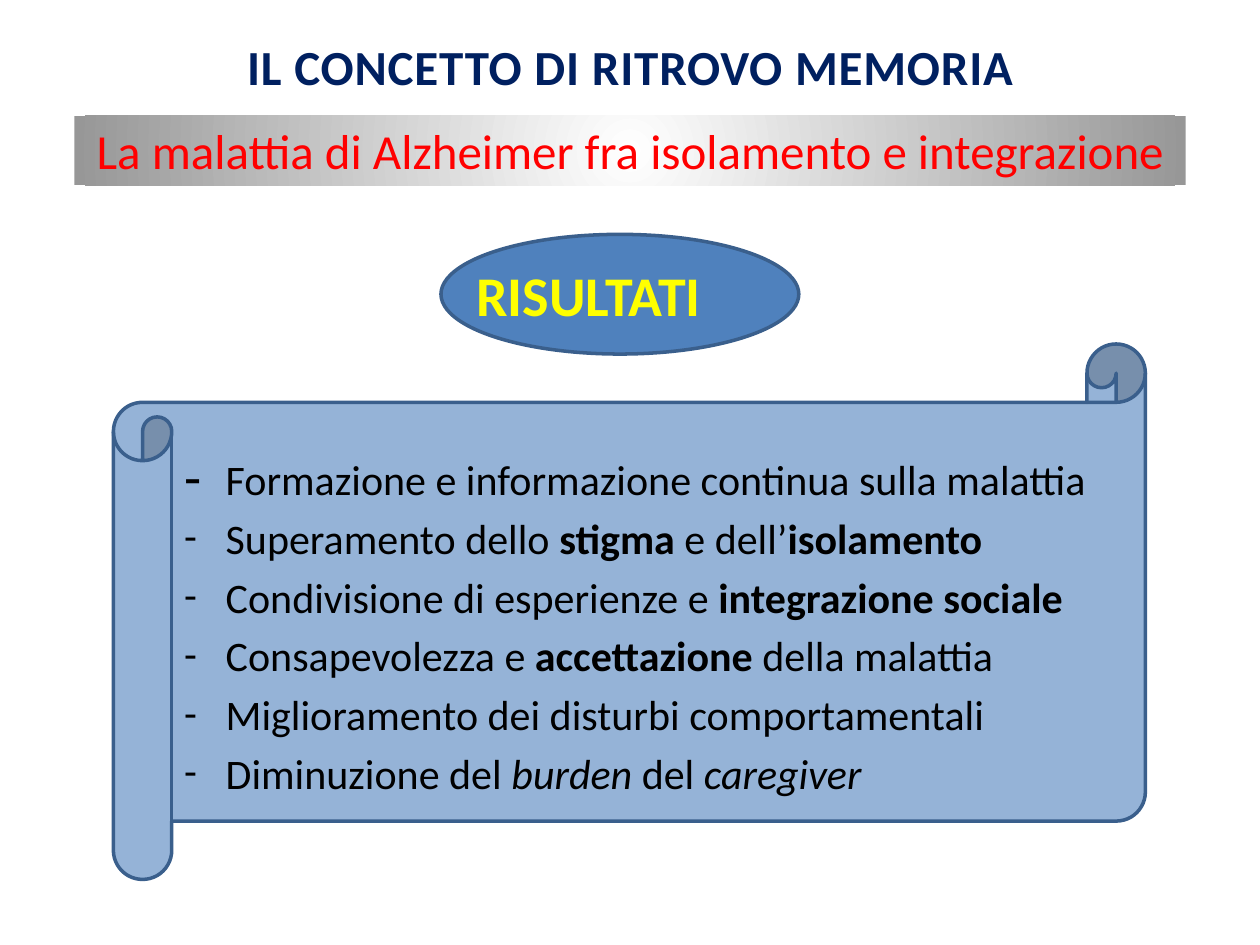
"""Build the slide on the results of the memory meeting place."""
import pptx
import pptx.util
import pptx.dml.color
import pptx.enum.shapes
import pptx.enum.text
import pptx.oxml
import pptx.oxml.ns

Inches, Pt = pptx.util.Inches, pptx.util.Pt
RGBColor = pptx.dml.color.RGBColor
SHAPE = pptx.enum.shapes.MSO_SHAPE
ANCHOR = pptx.enum.text.MSO_ANCHOR
ALIGN = pptx.enum.text.PP_ALIGN
qn = pptx.oxml.ns.qn

NAVY = RGBColor(0x00, 0x20, 0x60)
RED = RGBColor(0xFF, 0x00, 0x00)
YELLOW = RGBColor(0xFF, 0xFF, 0x00)
BLACK = RGBColor(0x00, 0x00, 0x00)
WHITE = RGBColor(0xFF, 0xFF, 0xFF)
GREY = RGBColor(0x97, 0x97, 0x97)
BLUE = RGBColor(0x4F, 0x81, 0xBD)
PALE = RGBColor(0x95, 0xB3, 0xD7)
EDGE = RGBColor(0x3A, 0x5F, 0x8C)

TITLE = "IL CONCETTO DI RITROVO MEMORIA"
BANNER = "La malattia di Alzheimer fra isolamento e integrazione"
HEAD = "RISULTATI"
ITEMS = [
    [("Formazione e informazione continua sulla malattia", "")],
    [("Superamento dello ", ""), ("stigma", "b"), (" e dell’", ""), ("isolamento", "b")],
    [("Condivisione di esperienze e ", ""), ("integrazione sociale", "b")],
    [("Consapevolezza e ", ""), ("accettazione", "b"), (" della malattia", "")],
    [("Miglioramento dei disturbi comportamentali", "")],
    [("Diminuzione del ", ""), ("burden", "i"), (" del ", ""), ("caregiver", "i")],
]
HANG = Inches(0.33)


def style(para, size, color, bold=None):
    font = para.font
    font.name, font.size, font.bold = "Calibri", Pt(size), bold
    font.color.rgb = color


def draw(slide, kind, box, fill=None):
    shape = slide.shapes.add_shape(kind, *map(Inches, box))
    shape.shadow.inherit = False
    if fill is None:
        shape.line.fill.background()
    else:
        shape.fill.solid()
        shape.fill.fore_color.rgb = fill
        shape.line.color.rgb = EDGE
        shape.line.width = Pt(2)
    return shape


def add_dash(para, scale):
    props = para._p.get_or_add_pPr()
    props.set("marL", str(HANG))
    props.set("indent", str(-HANG))
    for tag, name, value in (("buSzPct", "val", str(scale * 1000)),
                             ("buFont", "typeface", "Calibri"),
                             ("buChar", "char", "-")):
        props.append(pptx.oxml.parse_xml(
            f'<a:{tag} {pptx.oxml.ns.nsdecls("a")} {name}="{value}"/>'))


def add_title(slide):
    title = slide.shapes.title
    title.left, title.top, title.width, title.height = map(Inches, (0.51, 0.29, 8.99, 0.47))
    frame = title.text_frame
    frame.vertical_anchor = ANCHOR.MIDDLE
    para = frame.paragraphs[0]
    para.text = TITLE
    para.alignment = ALIGN.CENTER
    style(para, 28, NAVY, True)
    para.runs[0]._r.get_or_add_rPr().set("spc", "50")


def add_banner(slide):
    shape = draw(slide, SHAPE.RECTANGLE, (0.59, 0.92, 8.82, 0.55))
    shape.fill.gradient()
    for stop, color in zip(shape.fill.gradient_stops, (WHITE, GREY)):
        stop.color.rgb = color
    grad = shape._element.spPr.find(qn("a:gradFill"))
    grad.replace(grad.find(qn("a:lin")), pptx.oxml.parse_xml(
        f'<a:path {pptx.oxml.ns.nsdecls("a")} path="circle">'
        '<a:fillToRect l="50000" t="50000" r="50000" b="50000"/></a:path>'))
    frame = shape.text_frame
    frame.vertical_anchor = ANCHOR.BOTTOM
    para = frame.paragraphs[0]
    para.text = BANNER
    para.alignment = ALIGN.CENTER
    style(para, 28, RED)


def add_head(slide):
    draw(slide, SHAPE.OVAL, (3.5, 1.86, 2.84, 0.95), BLUE)
    frame = slide.shapes.add_textbox(*map(Inches, (3.58, 2.02, 2.6, 0.64))).text_frame
    frame.word_wrap = True
    frame.margin_left = Inches(0.2)
    para = frame.paragraphs[0]
    para.text = HEAD
    style(para, 32, YELLOW, True)


def add_scroll(slide):
    shape = draw(slide, SHAPE.HORIZONTAL_SCROLL, (0.9, 2.73, 8.19, 4.25), PALE)
    shape.adjustments[0] = 0.109
    frame = shape.text_frame
    frame.vertical_anchor = ANCHOR.MIDDLE
    frame.margin_top = Inches(0.27)
    for i, parts in enumerate(ITEMS):
        para = frame.add_paragraph() if i else frame.paragraphs[0]
        para.alignment = ALIGN.LEFT
        para.space_before = Pt(4.8 if i else 0)
        add_dash(para, 100 if i else 133)
        style(para, 24, BLACK)
        for text, mark in parts:
            run = para.add_run()
            run.text = text
            if mark == "b":
                run.font.bold = True
            elif mark == "i":
                run.font.italic = True


def main():
    deck = pptx.Presentation()
    deck.slide_width, deck.slide_height = Inches(10), Inches(7.5)
    slide = deck.slides.add_slide(deck.slide_layouts[5])
    add_head(slide)
    add_scroll(slide)
    add_title(slide)
    add_banner(slide)
    deck.save("out.pptx")


if __name__ == "__main__":
    main()
